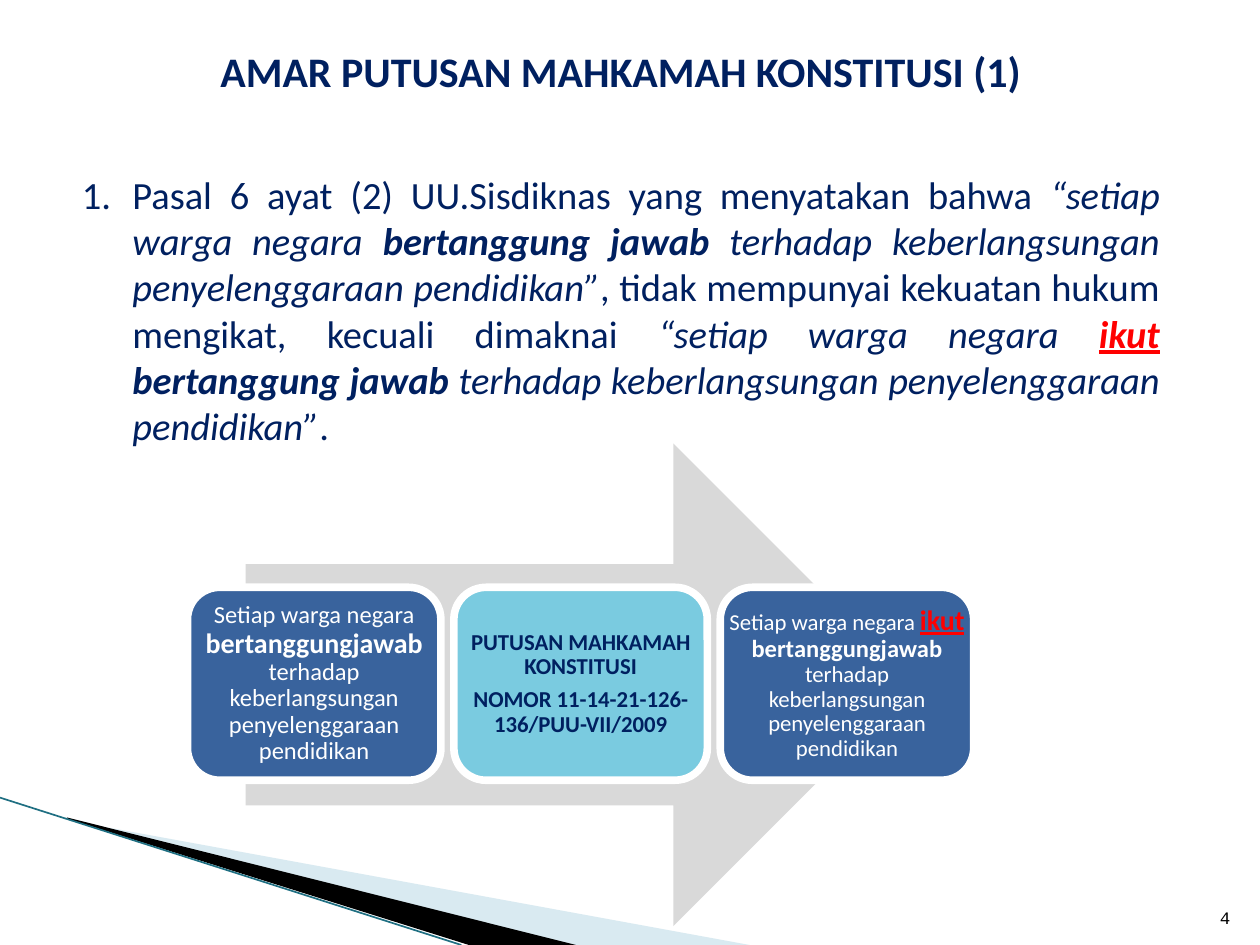
from dataclasses import dataclass

from lxml.etree import SubElement
from pptx import Presentation
from pptx.dml.color import RGBColor
from pptx.enum.shapes import MSO_CONNECTOR, MSO_SHAPE
from pptx.enum.text import MSO_ANCHOR, PP_ALIGN
from pptx.oxml.ns import qn
from pptx.util import Cm, Pt

COLORS = {
    "navy": "002060", "red": "FF0000", "white": "FFFFFF", "black": "000000",
    "blue": "39639D", "cyan": "7ACBE0", "arrow": "D9D9D9",
    "wedge": "A0CBDC", "edge": "1F6F82",
}


@dataclass
class Run:
    text: str
    size: float
    color: str = "navy"
    bold: bool = False
    italic: bool = False
    underline: bool = False
    font: str = "Calibri"


@dataclass
class Card:
    fill: str
    inset: float
    paragraphs: list[list[Run]]


def rgb(name: str) -> RGBColor:
    return RGBColor.from_string(COLORS[name])


def add_runs(p, runs: list[Run]) -> None:
    for item in runs:
        r = p.add_run()
        r.text = item.text
        font = r.font
        font.name, font.size = item.font, Pt(item.size)
        font.bold, font.italic, font.underline = item.bold, item.italic, item.underline
        font.color.rgb = rgb(item.color)


def add_text(s, box: tuple, paragraphs: list[list[Run]], align=PP_ALIGN.CENTER,
             anchor=MSO_ANCHOR.TOP, inset: float | None = None) -> list:
    """Add a wrapping text box and return its paragraphs; box is in cm."""
    tf = s.shapes.add_textbox(*map(Cm, box)).text_frame
    tf.word_wrap = True
    tf.vertical_anchor = anchor
    if inset is not None:
        tf.margin_left = tf.margin_right = tf.margin_top = tf.margin_bottom = Cm(inset)
    for i, runs in enumerate(paragraphs):
        p = tf.paragraphs[0] if i == 0 else tf.add_paragraph()
        p.alignment = align
        add_runs(p, runs)
    return list(tf.paragraphs)


def style(sp, fill: str, line: str | None = None, width: float = 0) -> None:
    sp.shadow.inherit = False
    sp.fill.solid()
    sp.fill.fore_color.rgb = rgb(fill)
    if line:
        sp.line.color.rgb = rgb(line)
        sp.line.width = Pt(width)
    else:
        sp.line.fill.background()


def add_wedge(s, points: list[tuple], fill: str, opacity: int = 100) -> None:
    """Add a closed outline; points are in hundredths of a cm."""
    builder = s.shapes.build_freeform(*points[0], scale=Cm(0.01))
    builder.add_line_segments(points[1:], close=True)
    sp = builder.convert_to_shape()
    style(sp, fill)
    if opacity < 100:
        color = sp.fill._xPr.find(qn("a:solidFill"))[0]
        SubElement(color, qn("a:alpha")).set("val", str(opacity * 1000))


def add_card(s, card: Card, box: tuple) -> None:
    sp = s.shapes.add_shape(MSO_SHAPE.ROUNDED_RECTANGLE, *map(Cm, box))
    style(sp, card.fill, "white", 4.33)
    for p in add_text(s, box, card.paragraphs, anchor=MSO_ANCHOR.MIDDLE, inset=card.inset):
        p.line_spacing = 0.9
        p.space_after = Pt(4.5)


TITLE = [Run("AMAR PUTUSAN MAHKAMAH KONSTITUSI (1)", 24, bold=True)]
RULING = [
    Run("Pasal 6 ayat (2) UU.Sisdiknas yang menyatakan bahwa ", 22),
    Run("“setiap warga negara ", 22, italic=True),
    Run("bertanggung jawab ", 22, bold=True, italic=True),
    Run("terhadap keberlangsungan penyelenggaraan pendidikan”", 22, italic=True),
    Run(", tidak mempunyai kekuatan hukum mengikat, kecuali dimaknai ", 22),
    Run("“setiap warga negara ", 22, italic=True),
    Run("ikut", 22, "red", bold=True, italic=True, underline=True),
    Run(" bertanggung jawab ", 22, bold=True, italic=True),
    Run("terhadap keberlangsungan penyelenggaraan pendidikan”", 22, italic=True),
    Run(".", 22),
]
CARDS = [
    Card("blue", 0.15, [[
        Run("Setiap warga negara ", 14, "white"),
        Run("bertanggungjawab ", 16, "white", bold=True),
        Run("terhadap keberlangsungan penyelenggaraan pendidikan", 14, "white"),
    ]]),
    Card("cyan", 0.13, [
        [Run("PUTUSAN MAHKAMAH KONSTITUSI", 13, bold=True)],
        [Run("NOMOR 11-14-21-126-136/PUU-VII/2009", 13, bold=True)],
    ]),
    Card("blue", 0.13, [[
        Run("Setiap warga negara ", 13, "white"),
        Run("ikut ", 16, "red", bold=True, underline=True),
        Run("bertanggungjawab ", 14, "white", bold=True),
        Run("terhadap keberlangsungan penyelenggaraan pendidikan", 13, "white"),
    ]]),
]
CARD_LEFT, CARD_TOP, CARD_W, CARD_H, CARD_PITCH = 3.78, 11.84, 5.11, 3.89, 5.37


def main() -> None:
    prs = Presentation()
    prs.slide_width, prs.slide_height = Cm(25.4), Cm(19.05)
    s = prs.slides.add_slide(prs.slide_layouts[6])

    # Corner decoration
    add_wedge(s, [(140, 1654), (1511, 1905), (1158, 1905), (140, 1651)], "wedge", 40)
    add_wedge(s, [(135, 1648), (1161, 1905), (945, 1905), (137, 1651)], "black")
    edge = s.shapes.add_connector(MSO_CONNECTOR.STRAIGHT, Cm(0), Cm(16.08), Cm(9.3), Cm(19.05))
    edge.line.color.rgb = rgb("edge")
    edge.line.width = Pt(0.95)
    SubElement(edge._element.spPr, qn("a:effectLst"))

    # Title and numbered ruling
    _, ruling = add_text(s, (1.4, 0.79, 22.23, 8.43), [TITLE, RULING])
    ruling.alignment = PP_ALIGN.JUSTIFY
    ruling.space_before = Pt(43)
    pPr = ruling._p.get_or_add_pPr()
    pPr.set("marL", str(Cm(1.02)))
    pPr.set("indent", str(-Cm(1.02)))
    SubElement(pPr, qn("a:buAutoNum")).set("type", "arabicPeriod")

    # Arrow with the three stages
    arrow = s.shapes.add_shape(MSO_SHAPE.RIGHT_ARROW, Cm(4.95), Cm(8.94), Cm(13.49), Cm(9.73))
    style(arrow, "arrow")
    for i, card in enumerate(CARDS):
        add_card(s, card, (CARD_LEFT + i * CARD_PITCH, CARD_TOP, CARD_W, CARD_H))

    # Slide number
    add_text(s, (24.03, 17.81, 1.02, 1.02), [[Run("4", 10, "black", font="Courier New")]],
             PP_ALIGN.RIGHT, MSO_ANCHOR.BOTTOM)

    prs.save("out.pptx")


if __name__ == "__main__":
    main()
